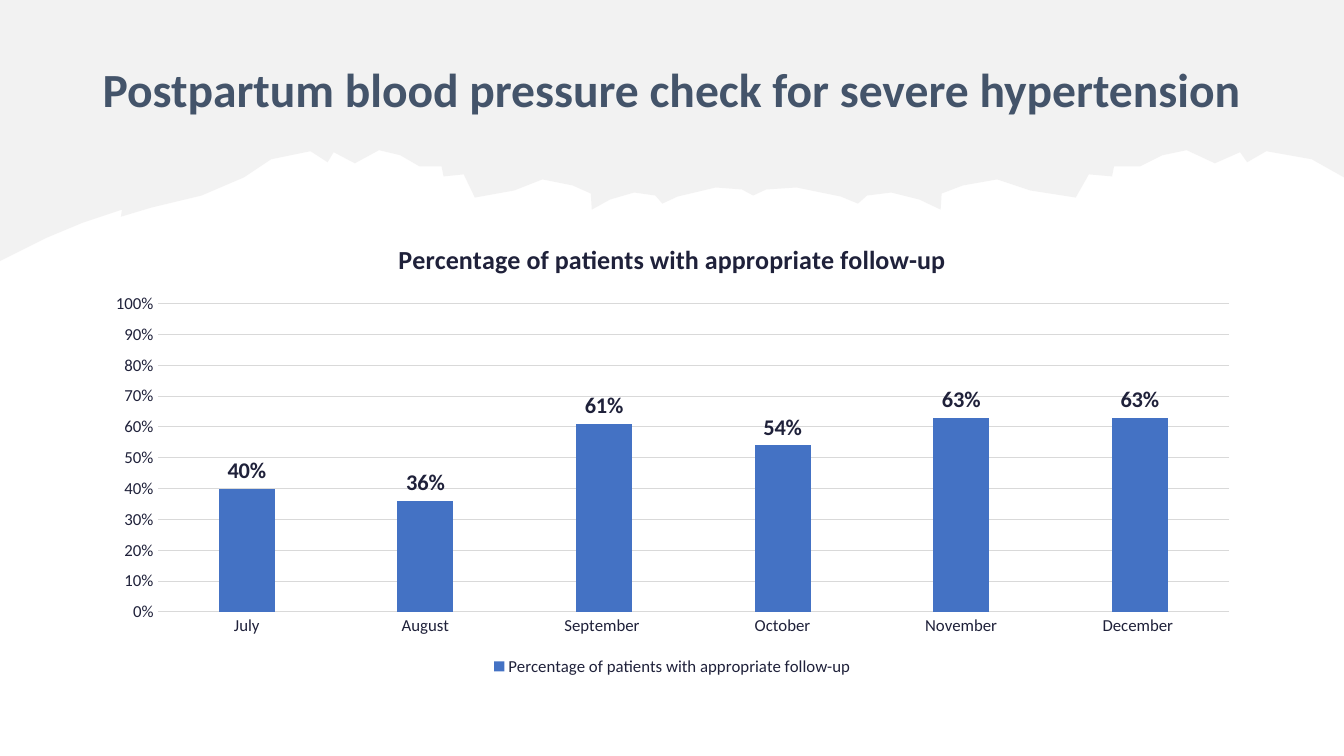
from lxml.etree import SubElement
from pptx import Presentation
from pptx.chart.data import CategoryChartData
from pptx.dml.color import RGBColor
from pptx.enum.chart import XL_CHART_TYPE, XL_LABEL_POSITION, XL_LEGEND_POSITION, XL_TICK_MARK
from pptx.enum.text import MSO_ANCHOR, PP_ALIGN
from pptx.oxml.ns import qn
from pptx.util import Emu, Pt

PX = 9144
WIDTH, HEIGHT = 1333, 750
WHITE = RGBColor(0xFF, 0xFF, 0xFF)
PAPER = RGBColor(0xE7, 0xE6, 0xE6)
SLATE = RGBColor(0x44, 0x54, 0x6A)
INK = RGBColor(0x1F, 0x21, 0x3A)
GRID = RGBColor(0xD9, 0xD9, 0xD9)
BLUE = RGBColor(0x44, 0x72, 0xC4)

MEASURE = "Percentage of patients with appropriate follow-up"
FOLLOW_UP = {
    "July": 0.4, "August": 0.36, "September ": 0.61,
    "October": 0.54, "November": 0.63, "December ": 0.63,
}

EDGE_CENTER = 747
EDGE_STRETCH = 1.16
LEFT_SLOPE = [(0, 259), (46, 236), (82, 221), (121, 208), (120, 215), (150, 206), (200, 194)]
TORN_HALF = [
    (242, 176), (269, 158), (308, 150), (325, 161), (331, 151), (352, 162),
    (376, 149), (397, 154), (416, 165), (438, 165), (440, 175), (460, 173),
    (471, 196), (510, 189), (538, 178), (568, 184), (586, 192), (587, 208),
    (605, 198), (629, 191), (650, 194), (657, 202), (672, 195), (710, 186),
    (736, 188), (EDGE_CENTER, 194),
]


def torn_outline():
    mirrored = [
        (EDGE_CENTER + EDGE_STRETCH * (EDGE_CENTER - x), y)
        for x, y in reversed(TORN_HALF[1:-1])
    ]
    end = (WIDTH, TORN_HALF[0][1])
    return LEFT_SLOPE + TORN_HALF + mirrored + [end, (WIDTH, 0), (0, 0)]


class SlideBuilder:
    font_name = "Calibri"

    def __init__(self, slide):
        self.slide = slide
        self.slide.background.fill.solid()
        self.slide.background.fill.fore_color.rgb = WHITE

    def box(self, *lengths):
        return [Emu(length * PX) for length in lengths]

    def style(self, font, size, color, bold=False):
        font.name = self.font_name
        font.size = Pt(size)
        font.bold = bold
        font.color.rgb = color

    def outline(self, line):
        line.color.rgb = GRID
        line.width = Pt(0.75)

    def freeform(self, points, color, opacity):
        builder = self.slide.shapes.build_freeform(*points[0], scale=PX)
        builder.add_line_segments(points[1:], close=True)
        shape = builder.convert_to_shape()
        shape.shadow.inherit = False
        shape.line.fill.background()
        shape.fill.solid()
        shape.fill.fore_color.rgb = color
        color_element = shape.element.spPr.find(qn("a:solidFill"))[0]
        SubElement(color_element, qn("a:alpha"), val=str(opacity * 1000))

    def text(self, box, text, size, color):
        frame = self.slide.shapes.add_textbox(*self.box(*box)).text_frame
        frame.word_wrap = True
        frame.margin_right = 0
        frame.vertical_anchor = MSO_ANCHOR.MIDDLE
        frame.text = text
        paragraph = frame.paragraphs[0]
        paragraph.alignment = PP_ALIGN.LEFT
        paragraph.line_spacing = 0.9
        self.style(paragraph.runs[0].font, size, color, True)

    def column_chart(self, box, title, values):
        data = CategoryChartData(number_format="0%")
        data.categories = list(values)
        data.add_series(title, list(values.values()))
        chart = self.slide.shapes.add_chart(
            XL_CHART_TYPE.COLUMN_CLUSTERED, *self.box(*box), data
        ).chart
        self.style(chart.font, 12, INK)
        chart.has_title = True
        chart.chart_title.include_in_layout = False
        chart.chart_title.text_frame.text = title
        title_run = chart.chart_title.text_frame.paragraphs[0].runs[0]
        self.style(title_run.font, 18.6, INK, True)
        chart.has_legend = True
        chart.legend.position = XL_LEGEND_POSITION.BOTTOM
        chart.legend.include_in_layout = False
        self.style(chart.legend.font, 12, INK)

        for axis in (chart.category_axis, chart.value_axis):
            axis.major_tick_mark = XL_TICK_MARK.NONE
            axis.minor_tick_mark = XL_TICK_MARK.NONE
            self.style(axis.tick_labels.font, 12, INK)
        self.outline(chart.category_axis.format.line)
        value_axis = chart.value_axis
        value_axis.minimum_scale = 0
        value_axis.maximum_scale = 1
        value_axis.major_unit = 0.1
        value_axis.tick_labels.number_format = "0%"
        value_axis.tick_labels.number_format_is_linked = False
        value_axis.format.line.fill.background()
        self.outline(value_axis.major_gridlines.format.line)

        plot = chart.plots[0]
        plot.vary_by_categories = False
        plot.gap_width = 219
        plot.overlap = -27
        series = plot.series[0]
        series.format.fill.solid()
        series.format.fill.fore_color.rgb = BLUE
        labels = series.data_labels
        labels.show_value = True
        labels.number_format = "0%"
        labels.number_format_is_linked = False
        labels.position = XL_LABEL_POSITION.OUTSIDE_END
        self.style(labels.font, 16, INK, True)


def main():
    presentation = Presentation()
    presentation.slide_width = Emu(WIDTH * PX)
    presentation.slide_height = Emu(HEIGHT * PX)
    builder = SlideBuilder(presentation.slides.add_slide(presentation.slide_layouts[6]))
    builder.freeform(torn_outline(), PAPER, 50)
    builder.text((92, 40, 1150, 102), "Postpartum blood pressure check for severe hypertension", 34, SLATE)
    builder.column_chart((92, 220, 1150, 455), MEASURE, FOLLOW_UP)
    presentation.save("out.pptx")


if __name__ == "__main__":
    main()
